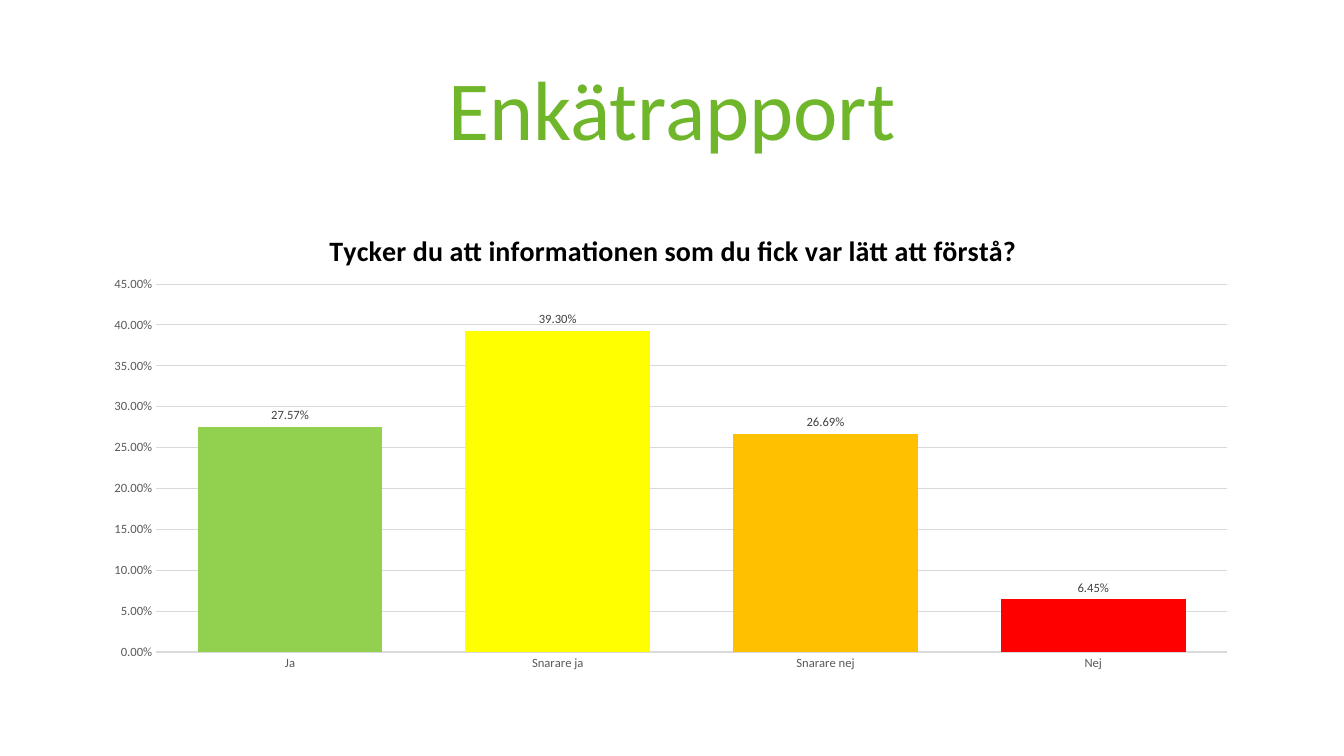
import pptx
import pptx.chart.data
import pptx.dml.color
import pptx.enum.chart
import pptx.enum.text
import pptx.oxml
import pptx.oxml.ns
import pptx.util
from pptx.util import Cm

# Content
HEADING = "Enkätrapport"
QUESTION = "Tycker du att informationen som du fick var lätt att förstå?"
ANSWERS = [  # answer, share, bar colour
    ("Ja", 0.2757, "92D050"),
    ("Snarare ja", 0.393, "FFFF00"),
    ("Snarare nej", 0.2669, "FFC000"),
    ("Nej", 0.0645, "FF0000"),
]

THEME = {
    "font": "Calibri",
    "heading": {"size": 60, "color": "6FB62A"},
    "question": {"size": 20, "color": "000000", "bold": True},
    "axis": {"size": 9, "color": "595959"},
    "label": {"size": 9, "color": "404040"},
    "grid": "D9D9D9",
    "grid_width": 0.75,
}

# Geometry
PAGE_WIDTH, PAGE_HEIGHT = Cm(33.87), Cm(19.05)
MARGIN = Cm(2.33)
CONTENT_WIDTH = PAGE_WIDTH - 2 * MARGIN
HEADING_TOP, HEADING_HEIGHT = Cm(1.02), Cm(3.68)
CHART_TOP, CHART_HEIGHT = Cm(5.08), Cm(12.09)
QUESTION_PLACE = {"x": 0.2, "y": 0.05}  # shares of the chart frame
PLOT_PLACE = {"x": 0.055, "y": 0.172, "w": 0.924, "h": 0.767}


def rgb(code):
    return pptx.dml.color.RGBColor.from_string(code)


def style_font(font, style):
    values = {"name": THEME["font"], "size": pptx.util.Pt(style["size"]),
              "bold": style.get("bold", False)}
    for name, value in values.items():
        setattr(font, name, value)
    font.color.rgb = rgb(style["color"])


def style_line(line):
    line.color.rgb = rgb(THEME["grid"])
    line.width = pptx.util.Pt(THEME["grid_width"])


def place(element, shares, index):
    """Fix the position of a chart part as shares of the chart frame."""
    for old in element.findall(pptx.oxml.ns.qn("c:layout")):
        element.remove(old)
    target = '<c:layoutTarget val="inner"/>' if "w" in shares else ""
    modes = "".join(f'<c:{key}Mode val="edge"/>' for key in "xy")
    sizes = "".join(f'<c:{key} val="{value}"/>' for key, value in shares.items())
    element.insert(index, pptx.oxml.parse_xml(
        f'<c:layout {pptx.oxml.ns.nsdecls("c")}><c:manualLayout>'
        f"{target}{modes}{sizes}</c:manualLayout></c:layout>"))


def add_heading(page):
    box = page.shapes.add_textbox(MARGIN, HEADING_TOP, CONTENT_WIDTH, HEADING_HEIGHT)
    frame = box.text_frame
    frame.word_wrap = True
    frame.vertical_anchor = pptx.enum.text.MSO_ANCHOR.MIDDLE
    para = frame.paragraphs[0]
    para.alignment = pptx.enum.text.PP_ALIGN.CENTER
    para.line_spacing = 0.9
    span = para.add_run()
    span.text = HEADING
    style_font(span.font, THEME["heading"])


def add_survey_chart(page):
    data = pptx.chart.data.CategoryChartData(number_format="0.00%")
    data.categories = [answer for answer, _, _ in ANSWERS]
    data.add_series("Series 1", [share for _, share, _ in ANSWERS])
    chart = page.shapes.add_chart(
        pptx.enum.chart.XL_CHART_TYPE.COLUMN_CLUSTERED,
        MARGIN, CHART_TOP, CONTENT_WIDTH, CHART_HEIGHT, data).chart
    chart.has_legend = False
    chart.font.name = THEME["font"]
    chart.font.size = pptx.util.Pt(10)

    # Question above the plot
    title = chart.chart_title
    span = title.text_frame.paragraphs[0].add_run()
    span.text = QUESTION
    style_font(span.font, THEME["question"])
    title.include_in_layout = False
    place(title._element, QUESTION_PLACE, 1)
    place(chart._chartSpace.chart.plotArea, PLOT_PLACE, 0)

    # Axes
    for axis in (chart.category_axis, chart.value_axis):
        axis.major_tick_mark = pptx.enum.chart.XL_TICK_MARK.NONE
        axis.minor_tick_mark = pptx.enum.chart.XL_TICK_MARK.NONE
        style_font(axis.tick_labels.font, THEME["axis"])
    style_line(chart.category_axis.format.line)
    values = chart.value_axis
    values.minimum_scale, values.maximum_scale, values.major_unit = 0, 0.45, 0.05
    values.format.line.fill.background()
    values.has_major_gridlines = True
    style_line(values.major_gridlines.format.line)
    values.tick_labels.number_format = "0.00%"
    values.tick_labels.number_format_is_linked = False

    # Bars and their labels
    plot = chart.plots[0]
    plot.gap_width, plot.overlap, plot.vary_by_categories = 45, -27, False
    series = plot.series[0]
    series.invert_if_negative = False
    for index, (_, _, color) in enumerate(ANSWERS):
        fill = series.points[index].format.fill
        fill.solid()
        fill.fore_color.rgb = rgb(color)
    labels = series.data_labels
    label_format = {
        "show_value": True,
        "number_format": "0.00%",
        "number_format_is_linked": False,
        "position": pptx.enum.chart.XL_LABEL_POSITION.OUTSIDE_END,
    }
    for name, value in label_format.items():
        setattr(labels, name, value)
    style_font(labels.font, THEME["label"])


def main():
    deck = pptx.Presentation()
    deck.slide_width, deck.slide_height = PAGE_WIDTH, PAGE_HEIGHT
    page = deck.slides.add_slide(deck.slide_layouts[6])
    add_heading(page)
    add_survey_chart(page)
    deck.save("out.pptx")


if __name__ == "__main__":
    main()
